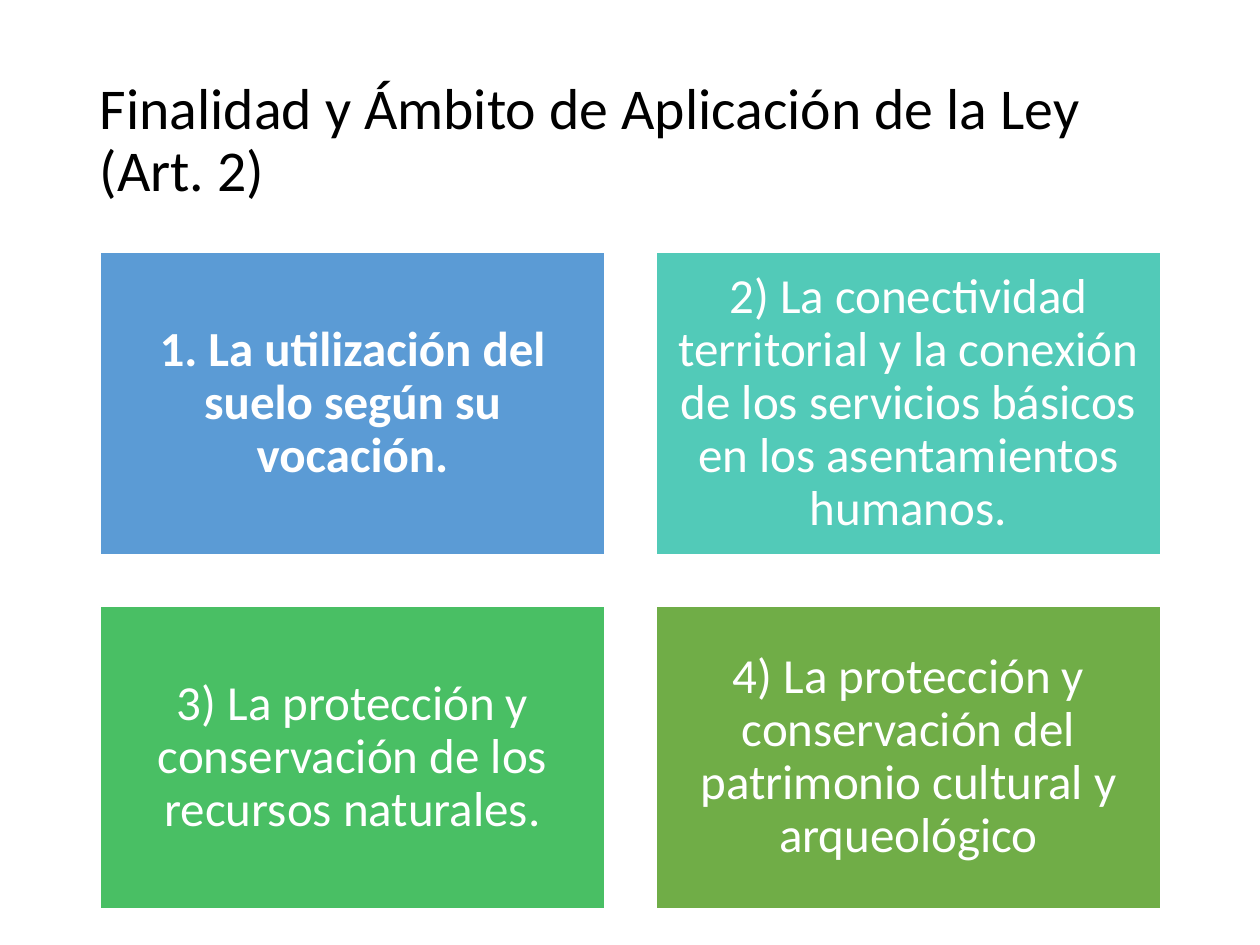
from pptx import Presentation
from pptx.dml.color import RGBColor
from pptx.enum.shapes import MSO_SHAPE
from pptx.enum.text import MSO_ANCHOR, MSO_AUTO_SIZE, PP_ALIGN
from pptx.util import Inches, Pt

BLACK = RGBColor(0x00, 0x00, 0x00)
WHITE = RGBColor(0xFF, 0xFF, 0xFF)
BLUE = RGBColor(0x5B, 0x9B, 0xD5)
TEAL = RGBColor(0x52, 0xCA, 0xB8)
GREEN = RGBColor(0x49, 0xBF, 0x64)
OLIVE = RGBColor(0x70, 0xAD, 0x47)

LEFT, TOP = 100, 252
BOX_W, BOX_H = 505, 303
GAP = 51
INSET = 15


def px(n):
    """Convert pixels, 126 to the inch, to EMU."""
    return round(n * Inches(1) / 126)


def format_text(tf, size, color, align, bold=False):
    tf.word_wrap = True
    tf.auto_size = MSO_AUTO_SIZE.NONE
    tf.vertical_anchor = MSO_ANCHOR.MIDDLE
    p = tf.paragraphs[0]
    p.alignment = align
    p.line_spacing = 0.9
    font = p.runs[0].font
    font.name = "Calibri"
    font.size = Pt(size)
    font.bold = bold
    font.color.rgb = color


prs = Presentation()
prs.slide_width, prs.slide_height = px(1260), px(945)
s = prs.slides.add_slide(prs.slide_layouts[5])

title = s.shapes.title
title.left, title.top, title.width, title.height = px(87), px(50), px(1086), px(183)
title.text_frame.text = "Finalidad y Ámbito de Aplicación de la Ley (Art. 2)"
format_text(title.text_frame, 33, BLACK, PP_ALIGN.LEFT)

purposes = [
    ("1. La utilización del suelo según su vocación.", BLUE, True),
    ("2) La conectividad territorial y la conexión de los servicios básicos "
     "en los asentamientos humanos.", TEAL, False),
    ("3) La protección y conservación de los recursos naturales.", GREEN, False),
    ("4) La protección y conservación del patrimonio cultural y arqueológico",
     OLIVE, False),
]

for i, (text, color, bold) in enumerate(purposes):
    row, col = divmod(i, 2)
    sp = s.shapes.add_shape(
        MSO_SHAPE.RECTANGLE,
        px(LEFT + col * (BOX_W + GAP)), px(TOP + row * (BOX_H + GAP)),
        px(BOX_W), px(BOX_H))
    sp.shadow.inherit = False
    sp.fill.solid()
    sp.fill.fore_color.rgb = color
    sp.line.color.rgb = WHITE
    sp.line.width = Pt(1)
    tf = sp.text_frame
    tf.margin_left = tf.margin_right = tf.margin_top = tf.margin_bottom = px(INSET)
    tf.text = text
    format_text(tf, 28, WHITE, PP_ALIGN.CENTER, bold)

prs.save("out.pptx")
